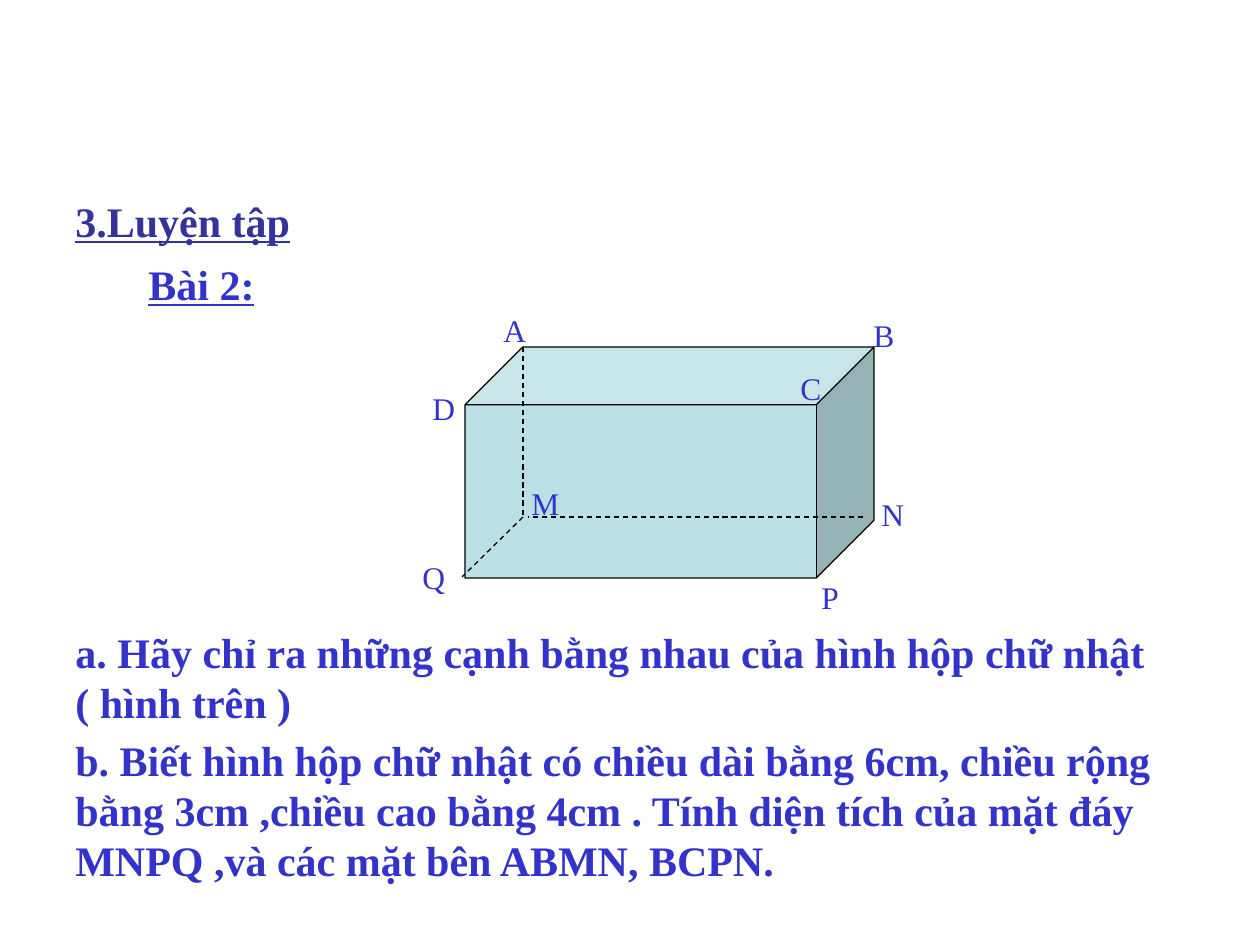
"""Build the exercise slide on the edges and faces of a box."""
from lxml import etree
from pptx import Presentation, util as u
from pptx.dml.color import RGBColor as Rgb
from pptx.enum import dml, shapes

theme = {
    "font": "Times New Roman", "head": 24, "label": 18,
    "navy": Rgb(0x33, 0x33, 0x99), "blue": Rgb(0x33, 0x33, 0xCC),
    "cube": Rgb(0xBB, 0xE0, 0xE3), "edge": Rgb(0, 0, 0), "line": 0.75,
}


def px(*vals):
    return [u.Emu(round(val * 914400 / 126)) for val in vals]


def write(words, box, size="head", color="blue", bold=True, under=False):
    frame = slide.shapes.add_textbox(*px(*box)).text_frame
    frame.word_wrap = True
    para = frame.paragraphs[0]
    para.text = words
    for run in para.runs:
        font = run.font
        font.name, font.size = theme["font"], u.Pt(theme[size])
        font.bold, font.underline = bold, under
        font.color.rgb = theme[color]


deck = Presentation()
deck.slide_width, deck.slide_height = px(1260, 945)
slide = deck.slides.add_slide(deck.slide_layouts[6])

write("3.Luyện tập", (63, 189, 756, 64), color="navy", under=True)
write("Bài 2:", (136, 252, 399, 64), under=True)
write("a. Hãy chỉ ra những cạnh bằng nhau của hình hộp chữ nhật\v( hình trên )",
      (63, 620, 1155, 115))
write("b. Biết hình hộp chữ nhật có chiều dài bằng 6cm, chiều rộng bằng 3cm ,"
      "chiều cao bằng 4cm . Tính diện tích của mặt đáy MNPQ ,và các mặt bên "
      "ABMN, BCPN.", (63, 728, 1197, 165))

cube = slide.shapes.add_shape(shapes.MSO_SHAPE.CUBE, *px(465, 347, 409, 231))
cube.adjustments[0] = 0.25
cube.shadow.inherit = False
cube.fill.solid()
cube.fill.fore_color.rgb = theme["cube"]
cube.line.color.rgb = theme["edge"]
cube.line.width = u.Pt(theme["line"])

for ends in [(523, 347, 523, 517), (863, 517, 528, 517), (523, 517, 462, 577)]:
    edge = slide.shapes.add_connector(shapes.MSO_CONNECTOR.STRAIGHT, *px(*ends))
    edge.line.color.rgb = theme["edge"]
    edge.line.width = u.Pt(theme["line"])
    edge.line.dash_style = dml.MSO_LINE.DASH
    props = edge.line._get_or_add_ln().getparent()
    etree.SubElement(props, props.tag.replace("}spPr", "}effectLst").replace(
        "presentationml", "drawingml"))

    for item in props.findall("{*}effectLst"):
        item.tag = "{http://schemas.openxmlformats.org/drawingml/2006/main}effectLst"

for name, left, top in [("A", 491, 305), ("B", 861, 310), ("C", 788, 363),
                        ("D", 420, 383), ("M", 519, 478), ("N", 869, 489),
                        ("P", 809, 572), ("Q", 410, 552)]:
    write(name, (left, top, 60, 50), size="label", bold=False)

deck.save("out.pptx")
